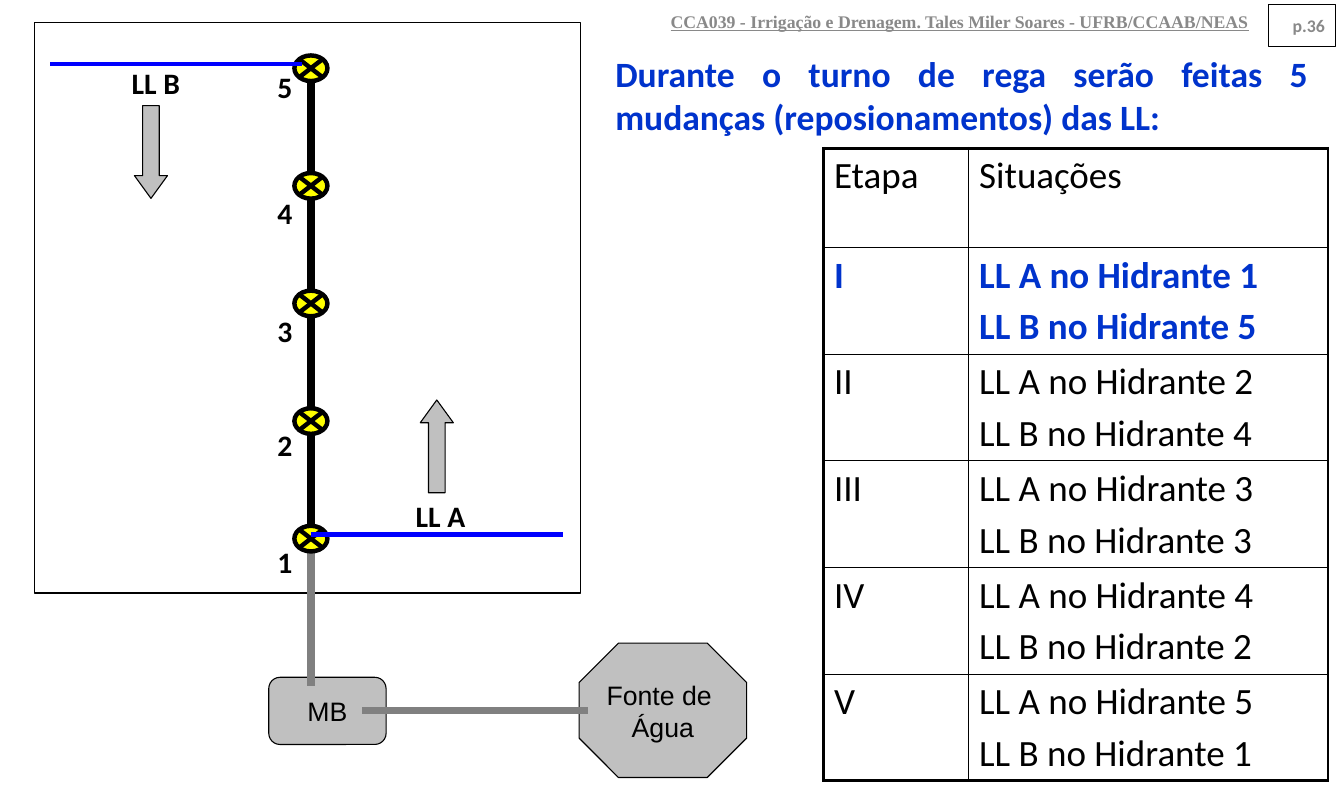
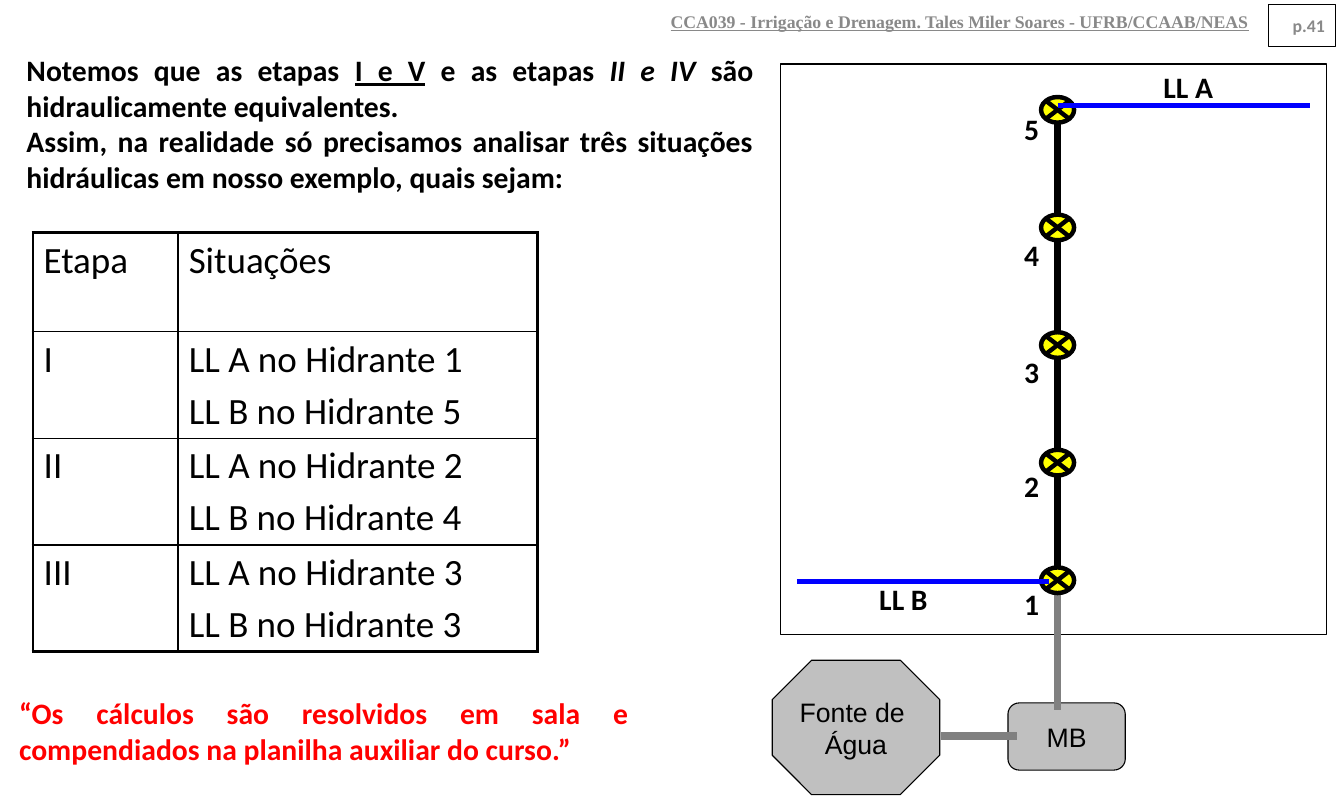
from lxml import etree
from pptx import Presentation
from pptx import util as u
from pptx.dml.color import RGBColor
from pptx.enum import shapes, text
from pptx.oxml.ns import qn

COLORS = {"black": "000000", "white": "FFFFFF", "grey": "C0C0C0", "pipe": "808080",
          "header": "898989", "yellow": "FFFF00", "lateral": "0000FF",
          "blue": "0033CC", "red": "FF0000"}
SHAPE = shapes.MSO_SHAPE
LEFT, CENTER, RIGHT, JUSTIFY = (text.PP_ALIGN.LEFT, text.PP_ALIGN.CENTER,
                                text.PP_ALIGN.RIGHT, text.PP_ALIGN.JUSTIFY)
TOP, MIDDLE = text.MSO_ANCHOR.TOP, text.MSO_ANCHOR.MIDDLE

# Content
COURSE = "CCA039 - Irrigação e Drenagem. Tales Miler Soares - UFRB/CCAAB/NEAS"
HEADINGS = ("Etapa", "Situações")
STAGES = [("I", 1, 5), ("II", 2, 4), ("III", 3, 3), ("IV", 4, 2), ("V", 5, 1)]
HYDRANTS = 5
# Number tops, hydrants 1 to 5, measured from the top of the field
NUMBER_TOPS = (4.84, 3.74, 2.67, 1.57, 0.39)

# A lateral is (name, label position, side, height), measured from the field's corner
SLIDES = [
    {"page": "p.36",
     "texts": [{"box": (5.67, 0.44, 6.69, 0.9), "size": 24, "color": "blue",
                "paragraphs": ["Durante o turno de rega serão feitas 5 mudanças "
                               "(reposionamentos) das LL:"]}],
     "table": {"at": (7.72, 1.39), "stages": STAGES, "current": "I"},
     "field": (0.32, 0.21),
     "laterals": [("LL A", (3.22, 4.41), "right", 4.8),
                  ("LL B", (0.55, 0.35), "left", 0.39)],
     "source": (5.43, 6.03), "pump": (2.52, 6.35),
     "suction": (5.51, 3.39, 6.66), "riser_end": 6.43,
     "arrows": [(3.94, 3.75, 0), (1.26, 0.99, 180)]},
    {"page": "p.41",
     "texts": [{"box": (0.15, 0.44, 7.01, 1.43), "size": 20, "color": "black",
                "paragraphs": [
                    ["Notemos que as etapas ", ("I e V", {"underline": True}),
                     " e as etapas ", ("II e IV", {"italic": True}),
                     " são hidraulicamente equivalentes."],
                    "Assim, na realidade só precisamos analisar três situações "
                    "hidráulicas em nosso exemplo, quais sejam:"]},
               {"box": (0.08, 6.47, 5.91, 0.77), "size": 20, "color": "red",
                "paragraphs": ["“Os cálculos são resolvidos em sala e "
                               "compendiados na planilha auxiliar do curso.”"]}],
     "table": {"at": (0.31, 2.18), "stages": STAGES[:3], "current": None},
     "field": (7.32, 0.6),
     "laterals": [("LL A", (3.23, 0), "right", 0.39),
                  ("LL B", (0.56, 4.8), "left", 4.85)],
     "source": (7.24, 6.19), "pump": (9.45, 6.59),
     "suction": (9.53, 8.82, 6.9), "riser_end": 6.66,
     "arrows": []},
]


def rgb(name):
    return RGBColor.from_string(COLORS[name])


def inches(values):
    return [u.Inches(v) for v in values]


def write(frame, paragraphs, size=20, font="Calibri", color="black", bold=True,
          underline=False, align=LEFT, anchor=TOP, wrap=True, before=0):
    """Fill a text frame; a paragraph is a string or a list of runs."""
    frame.word_wrap = wrap
    frame.vertical_anchor = anchor
    for i, runs in enumerate(paragraphs):
        para = frame.paragraphs[0] if i == 0 else frame.add_paragraph()
        para.alignment = align
        para.space_before = u.Pt(before)
        for item in [runs] if isinstance(runs, str) else runs:
            words, extra = (item, {}) if isinstance(item, str) else item
            run = para.add_run()
            run.text = words
            run.font.size, run.font.name = u.Pt(size), font
            run.font.bold = bold
            run.font.underline = extra.get("underline", underline)
            run.font.italic = extra.get("italic", False)
            run.font.color.rgb = rgb(color)


def add_text(slide, box, paragraphs, **fmt):
    write(slide.shapes.add_textbox(*inches(box)).text_frame, paragraphs, **fmt)


def add_block(slide, kind, box, fill=None, width=0.75, adjust=()):
    block = slide.shapes.add_shape(kind, *inches(box))
    block.shadow.inherit = False
    if fill:
        block.fill.solid()
        block.fill.fore_color.rgb = rgb(fill)
    else:
        block.fill.background()
    block.line.color.rgb = rgb("black")
    block.line.width = u.Pt(width)
    for i, value in enumerate(adjust):
        block.adjustments[i] = value
    return block


def add_pipe(slide, start, end, color, width):
    pipe = slide.shapes.add_connector(shapes.MSO_CONNECTOR.STRAIGHT,
                                      *inches(start + end))
    pipe.line.color.rgb = rgb(color)
    pipe.line.width = u.Pt(width)
    etree.SubElement(pipe._element.spPr, qn("a:effectLst"))


def set_borders(cell, widths):
    """Draw black cell borders, widths in points for left, right, top, bottom."""
    props = cell._tc.get_or_add_tcPr()
    for i, (side, width) in enumerate(zip("LRTB", widths)):
        line = etree.Element(qn("a:ln" + side), w=str(u.Pt(width)))
        fill = etree.SubElement(line, qn("a:solidFill"))
        etree.SubElement(fill, qn("a:srgbClr"), val=COLORS["black"])
        props.insert(i, line)


def add_stages(slide, at, stages, current):
    widths, heights = (1.36, 3.37), [0.93] + [1.0] * len(stages)
    rows = [[[h] for h in HEADINGS]]
    rows += [[[name], [f"LL A no Hidrante {a}", f"LL B no Hidrante {b}"]]
             for name, a, b in stages]
    table = slide.shapes.add_table(len(rows), len(widths), *inches(
        at + (sum(widths), sum(heights)))).table
    table.first_row = table.horz_banding = False
    for column, width in zip(table.columns, widths):
        column.width = u.Inches(width)
    for r, row in enumerate(rows):
        table.rows[r].height = u.Inches(heights[r])
        marked = row[0] == [current]
        for c, lines in enumerate(row):
            cell = table.cell(r, c)
            cell.fill.background()
            outer = (c == 0, c == len(widths) - 1, r == 0, r == len(rows) - 1)
            set_borders(cell, [2.25 if edge else 1 for edge in outer])
            write(cell.text_frame, lines, size=25, bold=marked, before=4.5,
                  color="blue" if marked else "black")


def add_network(slide, page):
    left, top = page["field"]
    main = left + 2.595
    add_block(slide, SHAPE.RECTANGLE, (left, top, 5.12, 5.35), "white")

    # Water source and pump
    for kind, box, adjust, words in (
            (SHAPE.OCTAGON, page["source"] + (1.57, 1.26), 0.293, ["Fonte de ", "Água"]),
            (SHAPE.ROUNDED_RECTANGLE, page["pump"] + (1.1, 0.63), 0.167, ["MB"])):
        block = add_block(slide, kind, box, "grey", adjust=[adjust])
        write(block.text_frame, words, size=18, font="Arial", bold=False,
              align=CENTER, anchor=MIDDLE, wrap=False)

    # Pipes
    x1, x2, y = page["suction"]
    add_pipe(slide, (x1, y), (x2, y), "pipe", 5)
    add_pipe(slide, (main, top + 4.88), (main, page["riser_end"]), "pipe", 5)
    add_pipe(slide, (main, top + 0.43), (main, top + 4.88), "black", 5)

    # Hydrants, number 1 at the bottom
    pitch = 4.41 / (HYDRANTS - 1)
    for i, number_top in enumerate(NUMBER_TOPS):
        y = top + 0.31 + pitch * (HYDRANTS - 1 - i)
        add_block(slide, SHAPE.FLOWCHART_SUMMING_JUNCTION,
                  (main - 0.155, y, 0.31, 0.24), "yellow", 3)
        add_text(slide, (left + 2.12, top + number_top, 0.4, 0.43), [str(i + 1)],
                 align=RIGHT)

    # Lateral lines
    spans = {"left": (left + 0.15, left + 2.51), "right": (main, left + 4.96)}
    for name, (dx, dy), side, height in page["laterals"]:
        x1, x2 = spans[side]
        add_pipe(slide, (x1, top + height), (x2, top + height), "lateral", 3)
        add_text(slide, (left + dx, top + dy, 1.18, 0.43), [name], align=CENTER)
    for x, y, turn in page["arrows"]:
        arrow = add_block(slide, SHAPE.UP_ARROW, (x, y, 0.31, 0.87), "grey",
                          adjust=(0.5, 0.689))
        arrow.rotation = turn


def add_header(slide, number):
    add_text(slide, (5.43, 0, 6.38, 0.4), [COURSE], size=12, font="Times New Roman",
             color="header", underline=True, align=RIGHT, anchor=MIDDLE)
    box = add_block(slide, SHAPE.RECTANGLE, (11.89, 0.04, 0.63, 0.4))
    write(box.text_frame, [number], size=12, color="header", align=RIGHT, anchor=MIDDLE)


def main():
    prs = Presentation()
    prs.slide_width, prs.slide_height = inches((12.6, 7.5))
    for page in SLIDES:
        slide = prs.slides.add_slide(prs.slide_layouts[6])
        add_header(slide, page["page"])
        add_network(slide, page)
        for item in page["texts"]:
            add_text(slide, item["box"], item["paragraphs"], size=item["size"],
                     color=item["color"], align=JUSTIFY)
        add_stages(slide, **page["table"])
    prs.save("out.pptx")


if __name__ == "__main__":
    main()
